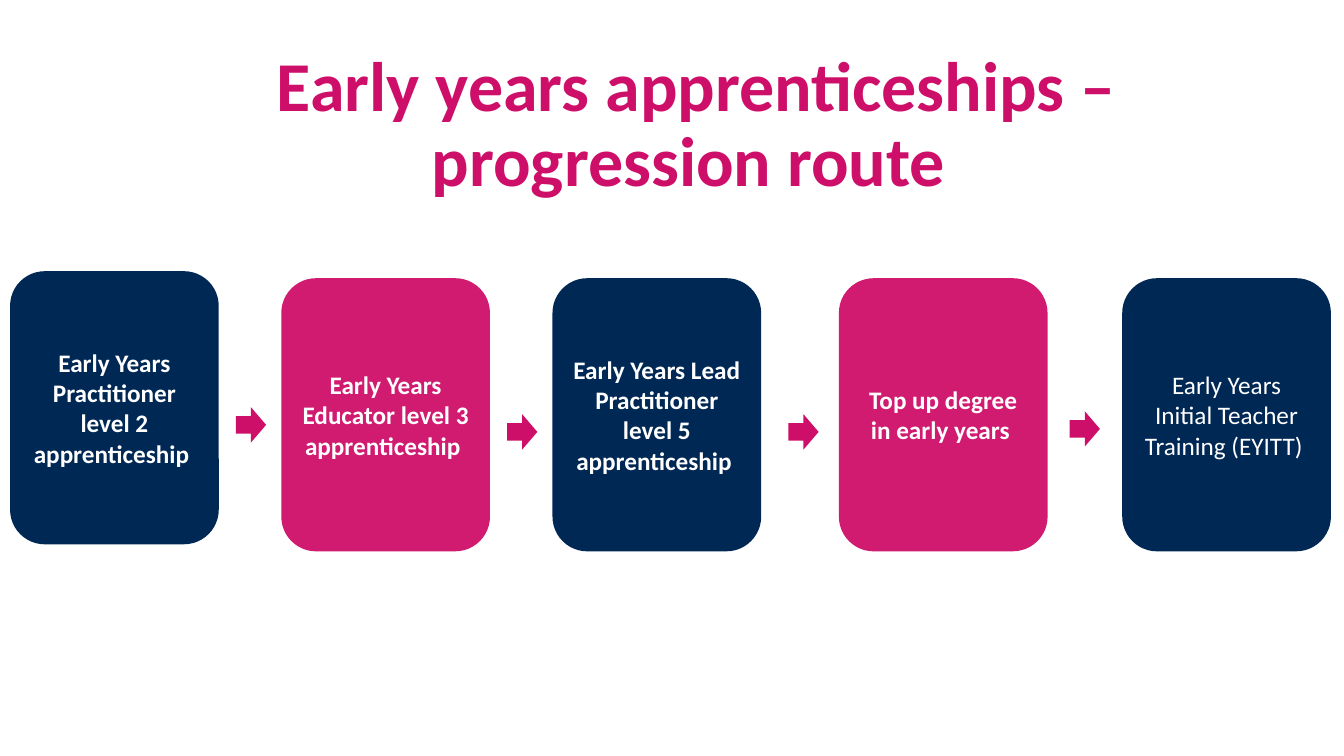
from dataclasses import dataclass

from pptx import Presentation
from pptx.dml.color import RGBColor
from pptx.enum.shapes import MSO_SHAPE
from pptx.enum.text import MSO_ANCHOR, PP_ALIGN
from pptx.util import Inches, Pt

ROUNDED = MSO_SHAPE.ROUNDED_RECTANGLE
ARROW = MSO_SHAPE.RIGHT_ARROW
MIDDLE = MSO_ANCHOR.MIDDLE
CENTER = PP_ALIGN.CENTER


@dataclass(frozen=True)
class Theme:
    font: str = "Calibri"
    navy: str = "002855"
    pink: str = "D01B71"
    accent: str = "CE0F69"
    white: str = "FFFFFF"
    title_size: int = 50
    step_size: int = 18


class SlideBuilder:
    def __init__(self, prs, theme):
        self.theme = theme
        self.width, self.height = prs.slide_width, prs.slide_height
        self.slide = prs.slides.add_slide(prs.slide_layouts[6])

    def place(self, x, y, w, h):
        return (int(x * self.width / 100), int(y * self.height / 100),
                int(w * self.width / 100), int(h * self.height / 100))

    def label(self, sp, text, size, color, bold=True, spacing=1.0):
        tf = sp.text_frame
        tf.word_wrap = True
        tf.vertical_anchor = MIDDLE
        p = tf.paragraphs[0]
        p.alignment = CENTER
        p.line_spacing = spacing
        r = p.add_run()
        r.text = text
        r.font.name = self.theme.font
        r.font.size = Pt(size)
        r.font.bold = bold
        r.font.color.rgb = RGBColor.from_string(color)

    def shape(self, kind, x, y, w, h, color):
        sp = self.slide.shapes.add_shape(kind, *self.place(x, y, w, h))
        sp.shadow.inherit = False
        sp.fill.solid()
        sp.fill.fore_color.rgb = RGBColor.from_string(color)
        sp.line.fill.background()
        return sp

    def title(self, text, x, y, w, h):
        sp = self.slide.shapes.add_textbox(*self.place(x, y, w, h))
        self.label(sp, text, self.theme.title_size, self.theme.accent, spacing=0.9)

    def step(self, text, x, y, color, bold):
        sp = self.shape(ROUNDED, x, y, 15.53, 36.13, color)
        self.label(sp, text, self.theme.step_size, self.theme.white, bold)

    def arrow(self, x, y):
        self.shape(ARROW, x, y, 2.25, 4.67, self.theme.accent)


STEPS = [
    ("Early Years Practitioner level 2 apprenticeship ", 0.75, 35.87, True),
    ("Early Years Educator level 3 apprenticeship ", 20.93, 36.8, True),
    ("Early Years Lead Practitioner level 5 apprenticeship ", 41.11, 36.8, True),
    ("Top up degree in early years ", 62.42, 36.8, True),
    ("Early Years Initial Teacher Training (EYITT) ", 83.5, 36.8, False),
]
ARROWS = [(17.55, 53.87), (37.73, 54.8), (58.66, 54.8), (79.59, 54.4)]


def main():
    prs = Presentation()
    prs.slide_width, prs.slide_height = Inches(13.33), Inches(7.5)
    theme = Theme()
    s = SlideBuilder(prs, theme)
    s.title("Early years apprenticeships – progression route ", 16.88, 7.07, 69.92, 19.33)
    for i, (text, x, y, bold) in enumerate(STEPS):
        s.step(text, x, y, (theme.navy, theme.pink)[i % 2], bold)
    for x, y in ARROWS:
        s.arrow(x, y)
    prs.save("out.pptx")


if __name__ == "__main__":
    main()
